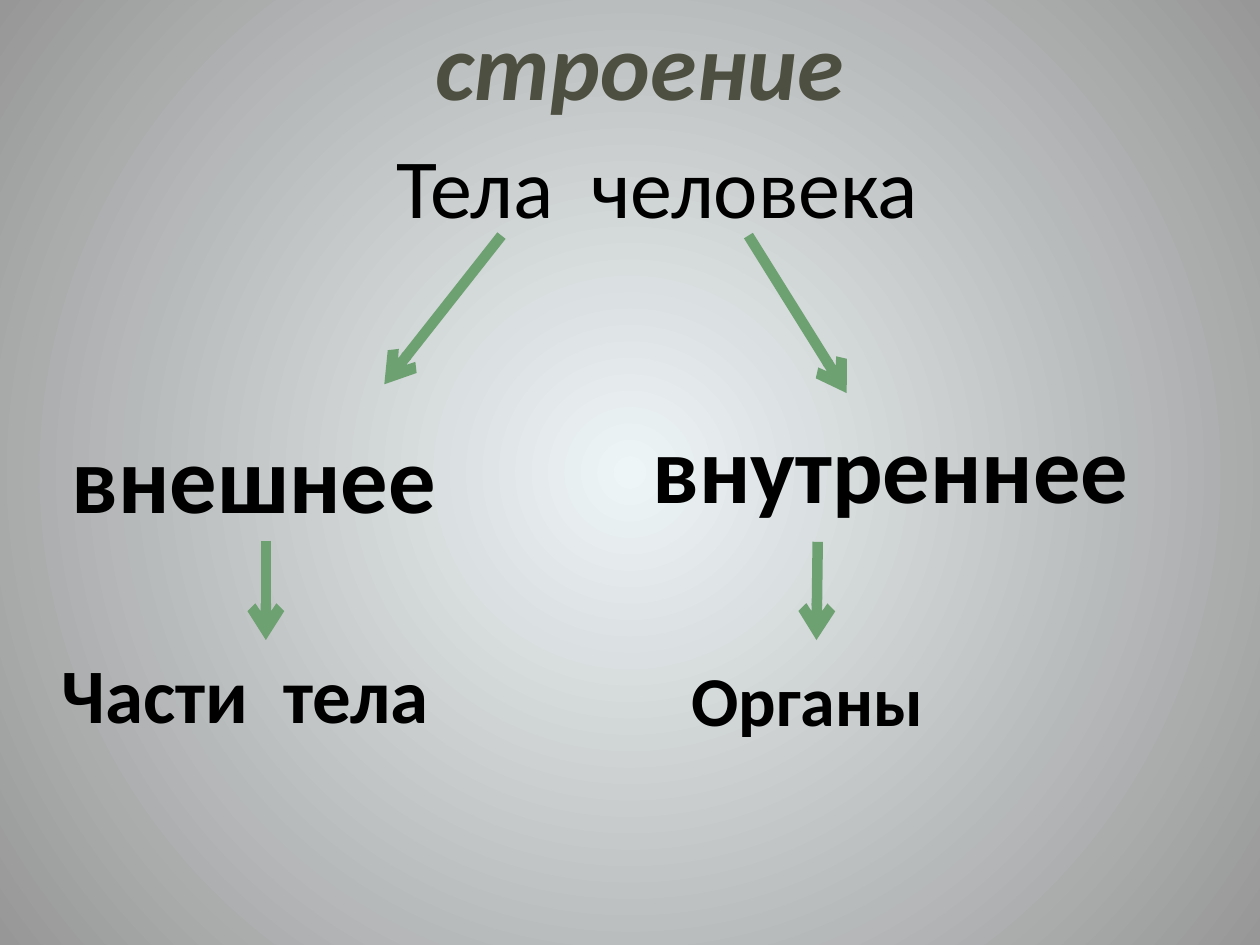
from pptx import Presentation
from pptx.dml.color import RGBColor
from pptx.enum import shapes, text
from pptx.oxml import parse_xml
from pptx.oxml.ns import nsdecls, qn
from pptx.util import Inches, Pt

THEME = {
    "font": "Calibri",
    "title": "4D5040",
    "ink": "000000",
    "arrow": "6EA172",
    "glow": "EEF5F7",
    "edge": "979797",
    "arrow_width": 6,
    "sizes": {"title": 54, "subject": 48, "branch": 54, "parts": 44, "organs": 40},
}

TITLE = ("строение", (3.36, 0, 3.91, 1.01))

# name: (words, left/top/width/height, size, bold)
LABELS = {
    "subject": ("Тела  человека", (3.05, 1.02, 4.69, 0.91), "subject", False),
    "outer": ("внешнее", (0.47, 3.28, 3.28, 1.01), "branch", True),
    "inner": ("внутреннее", (5.08, 3.2, 4.38, 1.01), "branch", True),
    "parts": ("Части  тела", (0.39, 5.08, 3.13, 0.84), "parts", True),
    "organs": ("Органы", (5.39, 5.16, 2.81, 0.77), "organs", True),
}

# (start, end, label whose bottom centre is the start)
ARROWS = [
    ((3.98, 1.87), (3.05, 3.05), None),
    ((5.94, 1.87), (6.72, 3.12), None),
    ((2.11, 4.29), (2.11, 5.08), "outer"),
    ((6.49, 4.3), (6.48, 5.08), None),
]


def color(name):
    return RGBColor.from_string(THEME[name])


def paint_background(page):
    """Radial gradient from the middle of the page outwards."""
    fill = page.background.fill
    fill.gradient()
    for stop, name in zip(fill.gradient_stops, ("glow", "edge")):
        stop.color.rgb = color(name)
    gradient = page.background._cSld.find(".//" + qn("a:gradFill"))
    gradient.remove(gradient.find(qn("a:lin")))
    gradient.append(parse_xml(
        f'<a:path {nsdecls("a")} path="circle">'
        '<a:fillToRect l="50000" t="50000" r="50000" b="50000"/></a:path>'))


def write(box, words, size, ink="ink", bold=True, italic=False):
    frame = box.text_frame
    frame.word_wrap = True
    frame.auto_size = text.MSO_AUTO_SIZE.SHAPE_TO_FIT_TEXT
    frame.vertical_anchor = text.MSO_ANCHOR.TOP
    para = frame.paragraphs[0]
    para.alignment = text.PP_ALIGN.LEFT
    span = para.add_run()
    span.text = words
    span.font.name = THEME["font"]
    span.font.size = Pt(THEME["sizes"][size])
    span.font.bold = bold
    span.font.italic = italic
    span.font.color.rgb = color(ink)


def add_arrow(page, start, end, source=None):
    arrow = page.shapes.add_connector(
        shapes.MSO_CONNECTOR.STRAIGHT, *map(Inches, start + end))
    if source is not None:
        arrow.begin_connect(source, 2)
    arrow.line.color.rgb = color("arrow")
    arrow.line.width = Pt(THEME["arrow_width"])
    arrow.line._get_or_add_ln().append(
        parse_xml(f'<a:tailEnd {nsdecls("a")} type="arrow"/>'))
    arrow._element.spPr.append(parse_xml(f'<a:effectLst {nsdecls("a")}/>'))


def main():
    deck = Presentation()
    deck.slide_width, deck.slide_height = Inches(10), Inches(7.5)
    page = deck.slides.add_slide(deck.slide_layouts[5])
    paint_background(page)

    words, place = TITLE
    title = page.shapes.title
    title.left, title.top, title.width, title.height = map(Inches, place)
    write(title, words, "title", "title", italic=True)

    boxes = {}
    for name, (words, place, size, bold) in LABELS.items():
        boxes[name] = page.shapes.add_textbox(*map(Inches, place))
        write(boxes[name], words, size, bold=bold)

    for start, end, source in ARROWS:
        add_arrow(page, start, end, boxes.get(source))

    deck.save("out.pptx")


if __name__ == "__main__":
    main()
